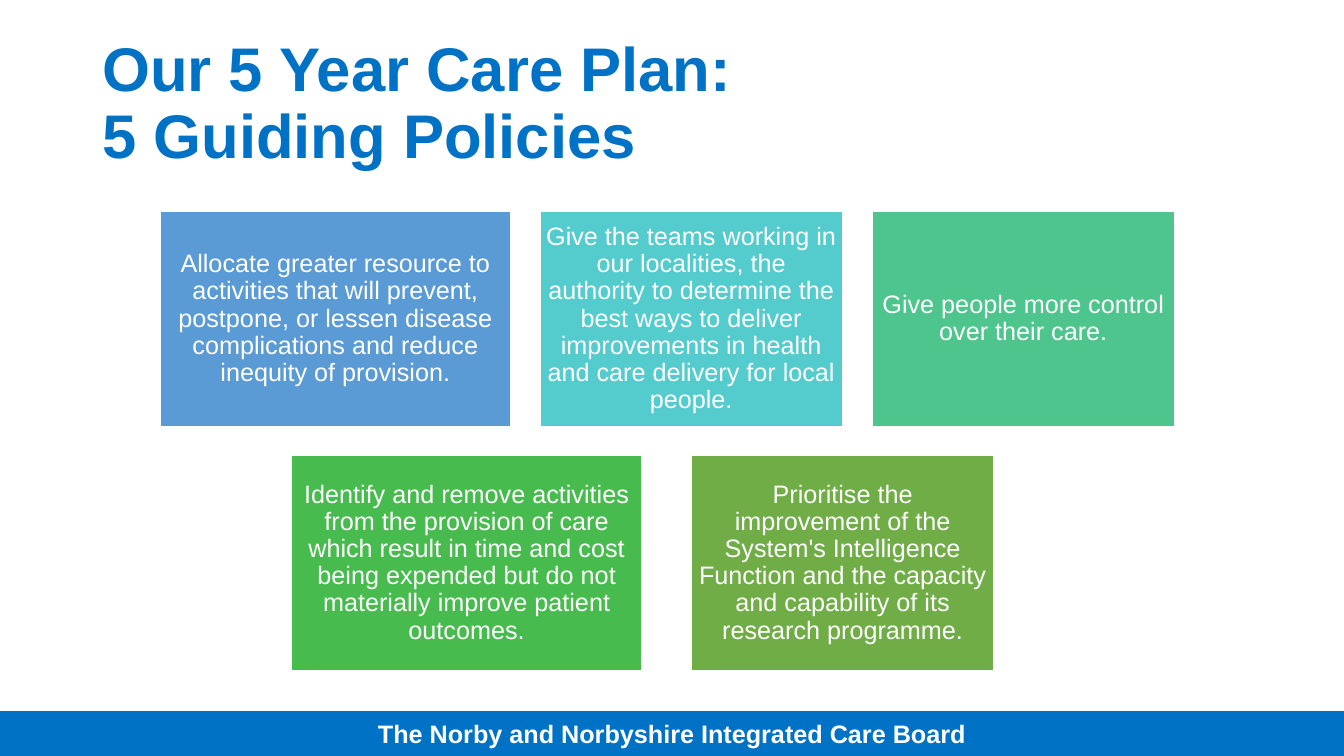
from pptx import Presentation
from pptx.dml.color import RGBColor
from pptx.enum.shapes import MSO_SHAPE as Shape
from pptx.enum.text import MSO_ANCHOR as Anchor, MSO_AUTO_SIZE as AutoSize, PP_ALIGN as Align
from pptx.util import Pt

SLIDE_W, SLIDE_H = 960, 540
FONT = "Arial"
COLOURS = {
    "board_blue": "0072C6",
    "white": "FFFFFF",
    "prevention": "5B9BD5",
    "localities": "54CCCD",
    "control": "4DC58D",
    "waste": "48BB4F",
    "intelligence": "70AD47",
}
WIDE, NARROW = 250, 216
# Each row: left edge, gap between cards, then (width, colour, policy)
POLICY_ROWS = [
    (114.5, 21.2, [
        (WIDE, "prevention", "Allocate greater resource to activities that will prevent, "
         "postpone, or lessen disease complications and reduce inequity of provision."),
        (NARROW, "localities", "Give the teams working in our localities, the authority to "
         "determine the best ways to deliver improvements in health and care delivery "
         "for local people."),
        (NARROW, "control", "Give people more control over their care."),
    ]),
    (208.3, 35.6, [
        (WIDE, "waste", "Identify and remove activities from the provision of care which "
         "result in time and cost being expended but do not materially improve patient "
         "outcomes."),
        (NARROW, "intelligence", "Prioritise the improvement of the System's Intelligence "
         "Function and the capacity and capability of its research programme."),
    ]),
]


def colour(name):
    return RGBColor.from_string(COLOURS[name])


def style_text(frame, text, size, ink, align, bold=False, spacing=None):
    frame.word_wrap = True
    frame.auto_size = AutoSize.NONE
    frame.vertical_anchor = Anchor.MIDDLE
    frame.text = text
    paragraph = frame.paragraphs[0]
    paragraph.alignment = align
    paragraph.line_spacing = spacing
    font = paragraph.font
    font.name, font.size, font.bold = FONT, Pt(size), bold
    font.color.rgb = colour(ink)


def add_panel(slide, box, fill, line):
    panel = slide.shapes.add_shape(Shape.RECTANGLE, *map(Pt, box))
    panel.shadow.inherit = False
    panel.fill.solid()
    panel.fill.fore_color.rgb = colour(fill)
    panel.line.color.rgb = colour(line)
    panel.line.width = Pt(1)
    return panel


def add_heading(slide, box):
    heading = slide.shapes.title
    heading.left, heading.top, heading.width, heading.height = map(Pt, box)
    style_text(heading.text_frame, "Our 5 Year Care Plan: \v5 Guiding Policies",
               44, "board_blue", Align.LEFT, bold=True, spacing=0.9)


def add_policies(slide, top, card_height, row_gap):
    for row, (left, gap, policies) in enumerate(POLICY_ROWS):
        row_top = top + row * (card_height + row_gap)
        for width, fill, policy in policies:
            card = add_panel(slide, (left, row_top, width, card_height), fill, "white")
            frame = card.text_frame
            frame.margin_left = frame.margin_right = Pt(4)
            frame.margin_top = frame.margin_bottom = Pt(4)
            style_text(frame, policy, 18, "white", Align.CENTER, spacing=0.9)
            left += width + gap


def add_footer(slide, box):
    band = add_panel(slide, box, "board_blue", "board_blue")
    style_text(band.text_frame, "The Norby and Norbyshire Integrated Care Board",
               18, "white", Align.CENTER, bold=True)


def main():
    deck = Presentation()
    deck.slide_width, deck.slide_height = Pt(SLIDE_W), Pt(SLIDE_H)
    slide = deck.slides.add_slide(deck.slide_layouts[5])
    add_footer(slide, (0, 508.3, SLIDE_W, 31.7))
    add_heading(slide, (66, 23, 828, 104.4))
    add_policies(slide, top=151, card_height=153.7, row_gap=20.6)
    deck.save("out.pptx")


if __name__ == "__main__":
    main()
